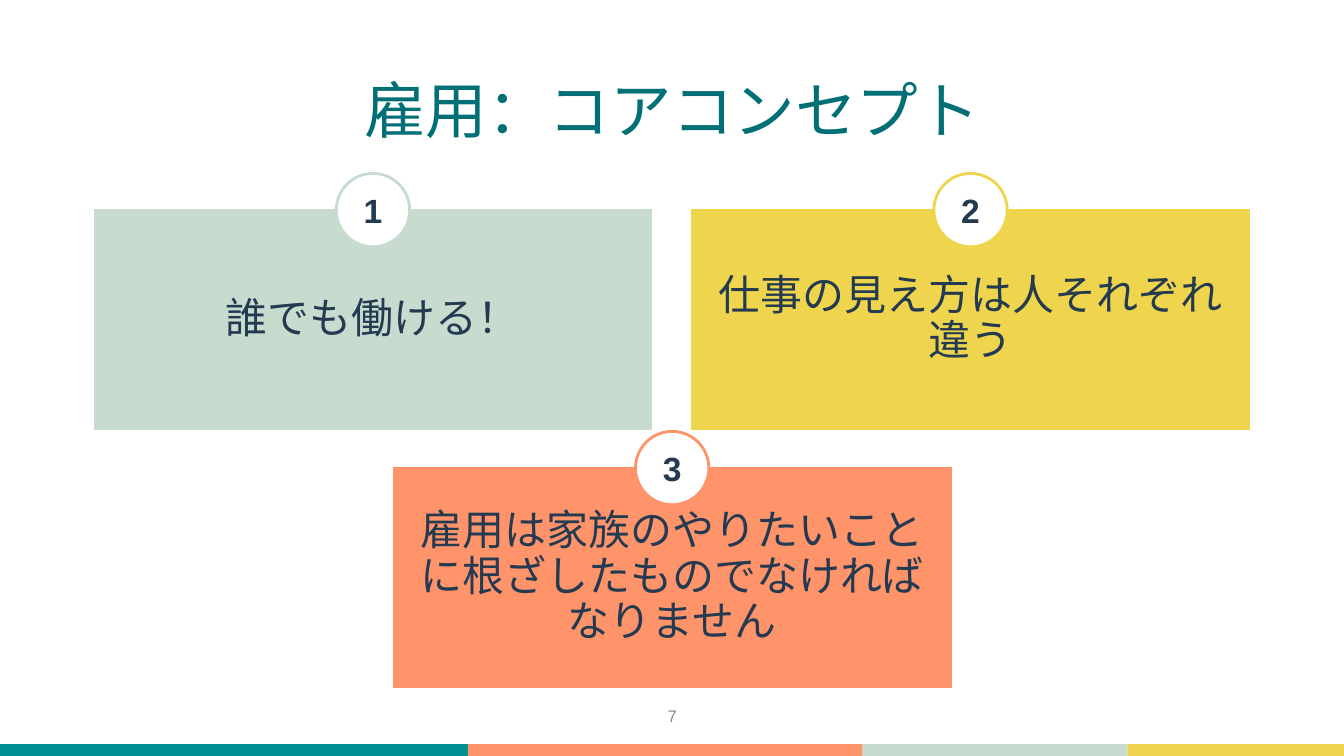
from pptx import Presentation
from pptx.dml.color import RGBColor
from pptx.enum.shapes import MSO_SHAPE as Shape
from pptx.enum.text import MSO_ANCHOR as Anchor, PP_ALIGN as Align
from pptx.util import Cm, Pt

WHITE = RGBColor(0xFF, 0xFF, 0xFF)
NAVY = RGBColor(0x24, 0x3A, 0x50)
GREY = RGBColor(0x8C, 0x8C, 0x8C)
DEEP_TEAL = RGBColor(0x01, 0x70, 0x76)
TEAL = RGBColor(0x02, 0x8D, 0x94)
MINT = RGBColor(0xC7, 0xDC, 0xCF)
YELLOW = RGBColor(0xEF, 0xD5, 0x4E)
CORAL = RGBColor(0xFF, 0x94, 0x6B)

SLIDE_WIDTH, SLIDE_HEIGHT = 33.87, 19.05
BAND_TOP = 18.75
CARD_WIDTH, CARD_HEIGHT = 14.12, 5.59
BADGE_SIZE, BADGE_RISE = 1.85, 0.89


def add_block(kind, left, top, width, height, fill, line=None, line_width=1):
    block = page.shapes.add_shape(kind, Cm(left), Cm(top), Cm(width), Cm(height))
    block.shadow.inherit = False
    block.fill.solid()
    block.fill.fore_color.rgb = fill
    if line is None:
        block.line.fill.background()
    else:
        block.line.color.rgb = line
        block.line.width = Pt(line_width)
    return block


def write(box, text, color, inset, line_spacing=1.0, **font_values):
    """Fill a box with one centred paragraph."""
    frame = box.text_frame
    frame.word_wrap = True
    frame.vertical_anchor = Anchor.MIDDLE
    for side in ("left", "top", "right", "bottom"):
        setattr(frame, f"margin_{side}", Cm(inset))
    para = frame.paragraphs[0]
    para.alignment = Align.CENTER
    para.line_spacing = line_spacing
    span = para.add_run()
    span.text = text
    span.font.color.rgb = color
    for name, value in font_values.items():
        setattr(span.font, name, value)


deck = Presentation()
deck.slide_width, deck.slide_height = Cm(SLIDE_WIDTH), Cm(SLIDE_HEIGHT)
page = deck.slides.add_slide(deck.slide_layouts[5])

# Colour band along the bottom edge
band_edges = [0, 11.79, 21.74, 28.42, SLIDE_WIDTH]
for start, end, color in zip(band_edges, band_edges[1:], [TEAL, CORAL, MINT, YELLOW]):
    add_block(Shape.RECTANGLE, start, BAND_TOP, end - start,
              SLIDE_HEIGHT - BAND_TOP, color)

page_number = page.shapes.add_textbox(Cm(13.13), Cm(17.53), Cm(7.62), Cm(1.02))
write(page_number, "7", GREY, 0.13, size=Pt(12), name="Arial")

title = page.shapes.title
title.left, title.top, title.width, title.height = Cm(2.34), Cm(1.02), Cm(29.21), Cm(3.68)
write(title, "雇用：コアコンセプト", DEEP_TEAL, 0.13, 0.9, size=Pt(44), name="Arial")

# Concept cards, each with a numbered badge on its top edge
cards = [
    (2.34, 5.26, MINT, "誰でも働ける！"),
    (17.4, 5.26, YELLOW, "仕事の見え方は人それぞれ違う"),
    (9.88, 11.76, CORAL, "雇用は家族のやりたいことに根ざしたものでなければなりません"),
]
for number, (left, top, color, text) in enumerate(cards, start=1):
    card = add_block(Shape.RECTANGLE, left, top, CARD_WIDTH, CARD_HEIGHT, color, WHITE)
    write(card, text, NAVY, 0.3, 0.9, size=Pt(30), name="Calibri")
    badge = add_block(Shape.OVAL, left + (CARD_WIDTH - BADGE_SIZE) / 2, top - BADGE_RISE,
                      BADGE_SIZE, BADGE_SIZE, WHITE, color, 2)
    write(badge, str(number), NAVY, 0, size=Pt(24), name="Arial", bold=True)

deck.save("out.pptx")
